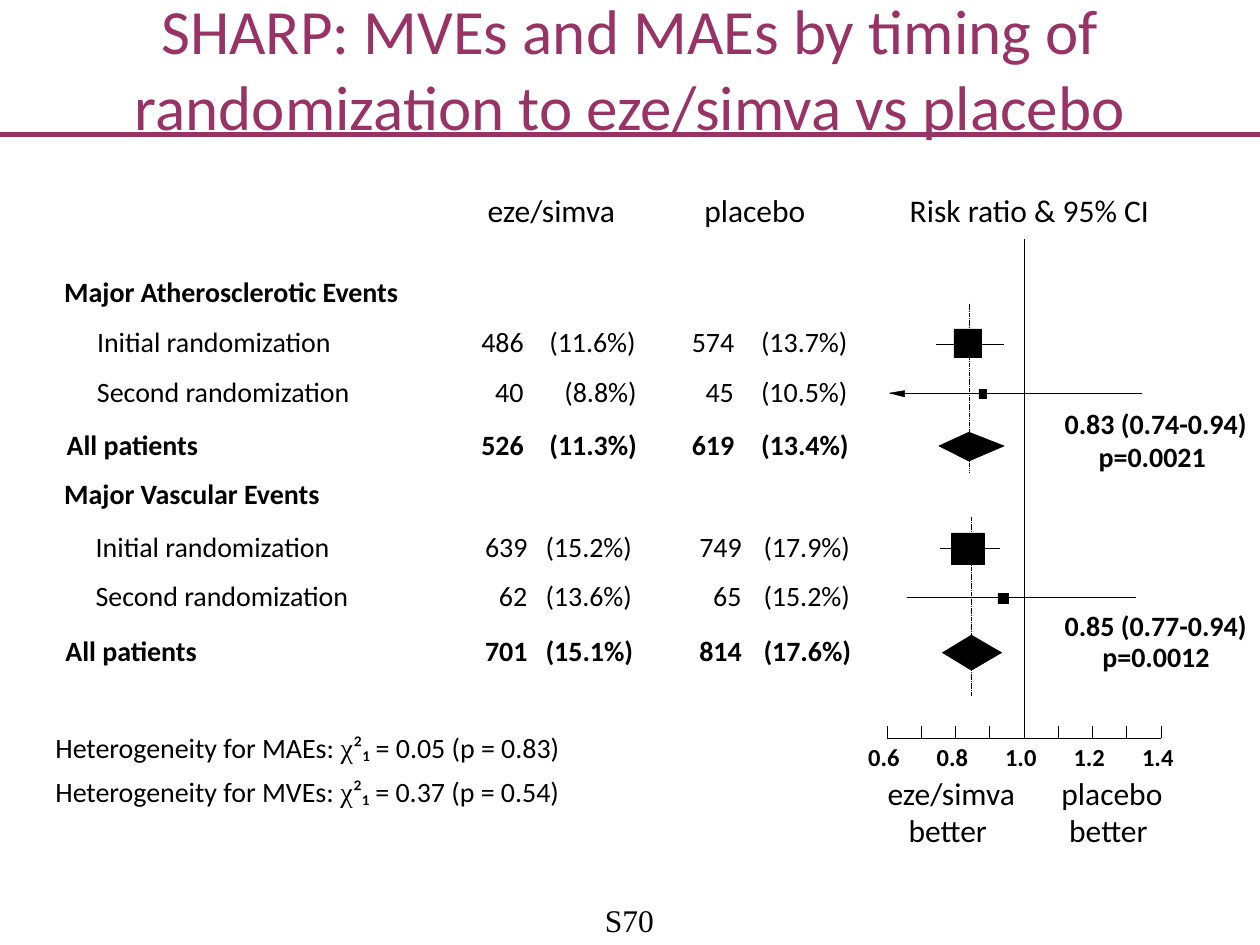
from dataclasses import dataclass

from lxml import etree
from pptx import Presentation
from pptx.dml.color import RGBColor
from pptx.enum.dml import MSO_LINE
from pptx.enum.shapes import MSO_CONNECTOR, MSO_SHAPE
from pptx.enum.text import MSO_ANCHOR, MSO_AUTO_SIZE, PP_ALIGN
from pptx.oxml.ns import qn
from pptx.util import Inches, Pt

STRAIGHT = MSO_CONNECTOR.STRAIGHT
RECTANGLE = MSO_SHAPE.RECTANGLE
DASHED = MSO_LINE.SQUARE_DOT
MIDDLE = MSO_ANCHOR.MIDDLE
GROW = MSO_AUTO_SIZE.SHAPE_TO_FIT_TEXT
LEFT, CENTER = PP_ALIGN.LEFT, PP_ALIGN.CENTER


@dataclass(frozen=True)
class Theme:
    accent: RGBColor = RGBColor(0x99, 0x33, 0x66)
    ink: RGBColor = RGBColor(0, 0, 0)
    body_font: str = "Calibri"
    serif_font: str = "Times New Roman"
    title_size: int = 36
    heading_size: int = 18
    row_size: int = 16
    axis_size: int = 14
    hairline: float = 0.25
    rule: float = 3


@dataclass(frozen=True)
class Row:
    """One trial period: values, square (left, top, width, height) and interval."""
    label: str
    top: float
    values: tuple[str, ...]
    square: tuple[float, float, float, float]
    interval: tuple[float, float]
    line_y: float
    label_width: float


@dataclass(frozen=True)
class Total:
    left: float
    top: float
    values: tuple[str, ...]
    diamond: tuple[tuple[float, float], ...]
    ratio: str
    ratio_top: float
    p_value: str
    p_box: tuple[float, float, float]


@dataclass(frozen=True)
class Outcome:
    heading: str
    heading_top: float
    heading_width: float
    row_left: float
    column_rights: tuple[float, ...]
    rows: tuple[Row, ...]
    total: Total
    guide: tuple[float, float, float]


THEME = Theme()
VALUE_WIDTHS = {2: 0.28, 3: 0.39, 6: 0.63, 7: 0.75}
ROW_HEIGHT = 0.27
AXIS_LEFT, AXIS_Y, TICK_TOP, TICK_GAP = 7.04, 5.86, 5.76, 0.2717
NO_EFFECT_X = AXIS_LEFT + 4 * TICK_GAP

OUTCOMES = (
    Outcome(
        "Major Atherosclerotic Events", 2.18, 2.69, 0.77, (4.21, 5.11, 5.88, 6.79),
        (Row("Initial randomization", 2.58, ("486", "(11.6%)", "574", "(13.7%)"),
             (7.57, 2.61, 0.22, 0.23), (7.43, 7.97), 2.73, 1.88),
         Row("Second randomization", 2.97, ("40", "(8.8%)", "45", "(10.5%)"),
             (7.77, 3.09, 0.06, 0.07), (7.06, 9.06), 3.12, 2.03)),
        Total(0.53, 3.39, ("526", "(11.3%)", "619", "(13.4%)"),
              ((7.69, 3.43), (7.97, 3.54), (7.69, 3.66), (7.45, 3.54)),
              "0.83 (0.74-0.94)", 3.23, "p=0.0021", (8.72, 3.49, 0.91)),
        (7.69, 2.41, 3.75)),
    Outcome(
        "Major Vascular Events", 3.78, 2.05, 0.76, (4.24, 5.08, 5.94, 6.81),
        (Row("Initial randomization", 4.2, ("639", "(15.2%)", "749", "(17.9%)"),
             (7.55, 4.23, 0.26, 0.25), (7.46, 7.94), 4.35, 1.88),
         Row("Second randomization", 4.59, ("62", "(13.6%)", "65", "(15.2%)"),
             (7.92, 4.71, 0.08, 0.08), (7.2, 9.02), 4.74, 2.03)),
        Total(0.52, 5.03, ("701", "(15.1%)", "814", "(17.6%)"),
              ((7.71, 5.04), (7.95, 5.18), (7.71, 5.32), (7.48, 5.18)),
              "0.85 (0.77-0.94)", 4.83, "p=0.0012", (8.75, 5.08, 0.86)),
        (7.71, 4.1, 5.52)),
)


def style(font, size: float, color=THEME.ink, name=THEME.body_font, bold=False) -> None:
    font.size, font.name, font.bold = Pt(size), name, bold
    font.color.rgb = color


def add_frame(slide, left: float, top: float, width: float, height: float, wrap=False):
    """Add a text box without insets that grows with its text."""
    box = slide.shapes.add_textbox(Inches(left), Inches(top), Inches(width), Inches(height))
    frame = box.text_frame
    frame.margin_left = frame.margin_right = frame.margin_top = frame.margin_bottom = 0
    frame.word_wrap, frame.auto_size = wrap, GROW
    return frame


def add_label(slide, text: str, left: float, top: float, width: float,
              height=ROW_HEIGHT, size=THEME.row_size, bold=False,
              name=THEME.body_font, align=LEFT) -> None:
    frame = add_frame(slide, left, top, width, height)
    frame.text = text
    for paragraph in frame.paragraphs:
        paragraph.alignment = align
        style(paragraph.font, size, name=name, bold=bold)


def add_line(slide, x1: float, y1: float, x2: float, y2: float,
             width=THEME.hairline, color=THEME.ink, dash=None) -> None:
    line = slide.shapes.add_connector(STRAIGHT, Inches(x1), Inches(y1), Inches(x2), Inches(y2))
    line.line.width, line.line.color.rgb = Pt(width), color
    if dash is not None:
        line.line.dash_style = dash
    etree.SubElement(line._element.spPr, qn("a:effectLst"))


def paint_solid(shape) -> None:
    shape.shadow.inherit = False
    shape.fill.solid()
    shape.fill.fore_color.rgb = shape.line.color.rgb = THEME.ink
    shape.line.width = Pt(THEME.hairline)


def add_polygon(slide, points: tuple[tuple[float, float], ...]) -> None:
    first, *rest = [(Inches(x), Inches(y)) for x, y in points]
    builder = slide.shapes.build_freeform(*first)
    builder.add_line_segments(rest, close=True)
    paint_solid(builder.convert_to_shape())


def add_values(slide, values: tuple[str, ...], rights: tuple[float, ...], top: float,
               bold=False) -> None:
    for value, right in zip(values, rights):
        width = VALUE_WIDTHS[len(value)]
        add_label(slide, value, right - width, top, width, bold=bold)


def add_outcome(slide, outcome: Outcome) -> None:
    add_label(slide, outcome.heading, 0.51, outcome.heading_top, outcome.heading_width, bold=True)
    for row in outcome.rows:
        add_label(slide, row.label, outcome.row_left, row.top, row.label_width)
        add_values(slide, row.values, outcome.column_rights, row.top)
        paint_solid(slide.shapes.add_shape(RECTANGLE, *map(Inches, row.square)))
        start, end = row.interval
        add_line(slide, start, row.line_y, end, row.line_y)
    total = outcome.total
    add_label(slide, "All patients", total.left, total.top, 1.06, bold=True)
    add_values(slide, total.values, outcome.column_rights, total.top, bold=True)
    add_label(slide, total.ratio, 8.45, total.ratio_top, 1.46, bold=True)
    add_label(slide, total.p_value, *total.p_box, bold=True)
    add_polygon(slide, total.diamond)
    x, top, bottom = outcome.guide
    add_line(slide, x, top, x, bottom, dash=DASHED)


def add_axis(slide) -> None:
    add_line(slide, NO_EFFECT_X, 1.9, NO_EFFECT_X, TICK_TOP)
    add_line(slide, AXIS_LEFT, AXIS_Y, AXIS_LEFT + 8 * TICK_GAP, AXIS_Y)
    for tick in range(9):
        x = AXIS_LEFT + tick * TICK_GAP
        add_line(slide, x, AXIS_Y, x, TICK_TOP)
        if tick % 2 == 0:
            add_label(slide, f"{0.6 + tick / 10:.1f}", x - 0.15, 5.89, 0.42, 0.31,
                      THEME.axis_size, bold=True)
    for arm, left, width in (("eze/simva", 7.04, 1.02), ("placebo", 8.42, 0.81)):
        add_label(slide, f"{arm}\nbetter ", left, 6.14, width, 0.64,
                  THEME.heading_size, align=CENTER)


def add_heterogeneity(slide) -> None:
    frame = add_frame(slide, 0.44, 5.8, 4.06, 0.62, wrap=True)
    tests = (("MAEs", "0.05 (p = 0.83)"), ("MVEs", "0.37 (p = 0.54)"))
    for index, (events, result) in enumerate(tests):
        paragraph = frame.add_paragraph() if index else frame.paragraphs[0]
        paragraph.space_after = Pt(6)
        style(paragraph.font, THEME.row_size)
        for text, name in ((f"Heterogeneity for {events}: ", THEME.body_font),
                           ("χ", THEME.serif_font), (f"²₁ = {result}", THEME.body_font)):
            run = paragraph.add_run()
            run.text, run.font.name = text, name


def add_title(slide) -> None:
    frame = slide.shapes.add_textbox(0, 0, Inches(10), Inches(1.07)).text_frame
    frame.word_wrap, frame.vertical_anchor = True, MIDDLE
    frame.text = "SHARP: MVEs and MAEs by timing of randomization to eze/simva vs placebo"
    frame.paragraphs[0].alignment = CENTER
    style(frame.paragraphs[0].font, THEME.title_size, THEME.accent)


def main() -> None:
    deck = Presentation()
    deck.slide_width, deck.slide_height = Inches(10), Inches(7.5)
    slide = deck.slides.add_slide(deck.slide_layouts[6])
    add_line(slide, 0, 1.07, 10, 1.07, THEME.rule, THEME.accent)
    add_title(slide)
    add_label(slide, "S70", 4.78, 7.15, 0.43, 0.3, THEME.heading_size,
              name=THEME.serif_font, align=CENTER)
    for heading, left, width in (("eze/simva", 3.87, 1.02), ("placebo", 5.59, 0.81),
                                 ("Risk ratio & 95% CI", 7.22, 1.92)):
        add_label(slide, heading, left, 1.52, width, 0.3, THEME.heading_size)
    for outcome in OUTCOMES:
        add_outcome(slide, outcome)
    add_polygon(slide, ((7.06, 3.12), (7.18, 3.1), (7.18, 3.15)))
    add_axis(slide)
    add_heterogeneity(slide)
    deck.save("out.pptx")


if __name__ == "__main__":
    main()
